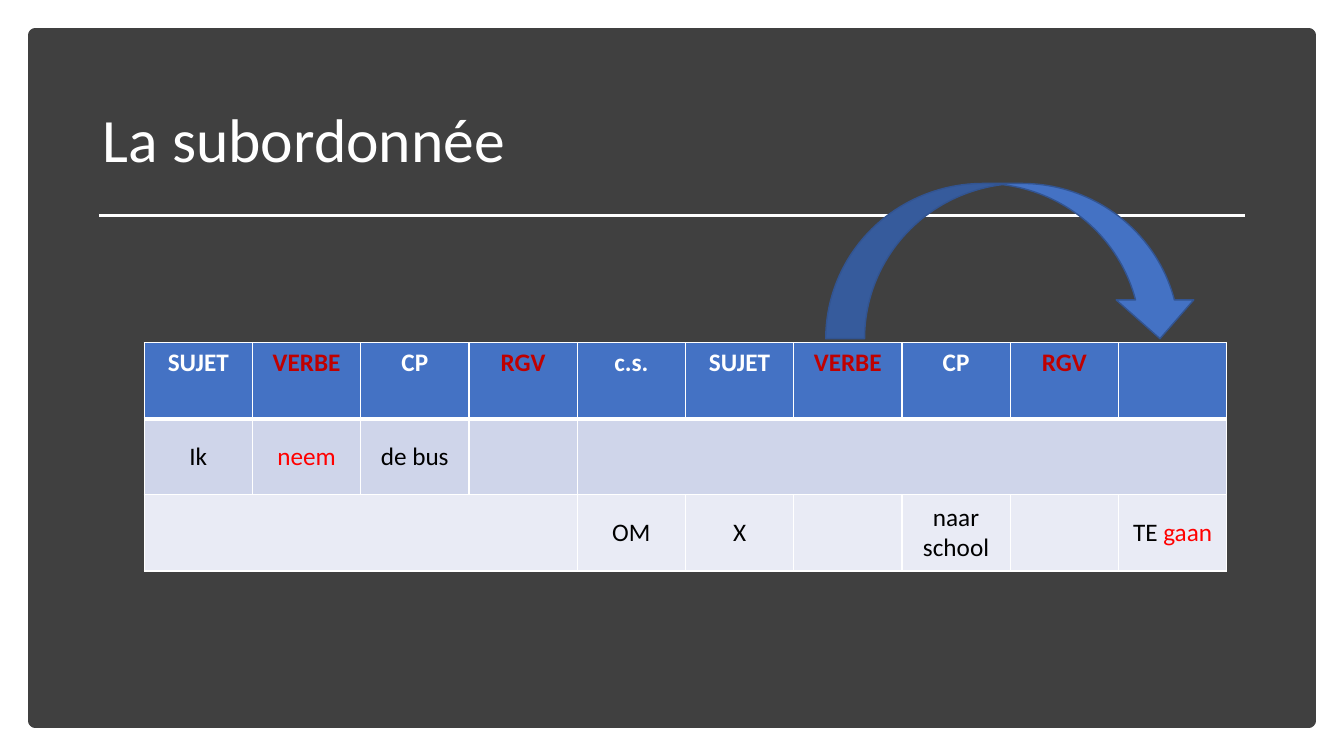
import lxml.etree
import pptx
import pptx.dml.color
import pptx.enum.shapes
import pptx.enum.text
import pptx.oxml.ns
import pptx.util

Inches = pptx.util.Inches
Pt = pptx.util.Pt
RGBColor = pptx.dml.color.RGBColor
SHAPES = pptx.enum.shapes.MSO_SHAPE
ALIGN = pptx.enum.text.PP_ALIGN
ANCHOR = pptx.enum.text.MSO_ANCHOR
qn = pptx.oxml.ns.qn

WHITE = RGBColor(0xFF, 0xFF, 0xFF)
BLACK = RGBColor(0, 0, 0)
CHARCOAL = RGBColor(0x40, 0x40, 0x40)
BLUE = RGBColor(0x44, 0x72, 0xC4)
DARK_BLUE = RGBColor(0x32, 0x54, 0x91)
PALE_BLUE = RGBColor(0xCF, 0xD5, 0xEA)
PALEST_BLUE = RGBColor(0xE9, 0xEB, 0xF5)
DARK_RED = RGBColor(0xC0, 0, 0)
RED = RGBColor(0xFF, 0, 0)

ROWS = [
    ["SUJET", "VERBE", "CP", "RGV", "c.s.", "SUJET", "VERBE", "CP", "RGV", ""],
    ["Ik", "neem", "de bus", "", "", "", "", "", "", ""],
    ["", "", "", "", "OM", "X", "", "naar school", "", "TE gaan"],
]
ROW_FILLS = [BLUE, PALE_BLUE, PALEST_BLUE]
MERGES = [((1, 4), (1, 9)), ((2, 0), (2, 3))]
WORD_COLORS = {"VERBE": DARK_RED, "RGV": DARK_RED, "neem": RED, "gaan": RED}


class SlideBuilder:
    font = "Calibri"

    def __init__(self, deck):
        self.page = deck.slides.add_slide(deck.slide_layouts[5])

    def style(self, span, size, color, bold=False):
        span.font.name = self.font
        span.font.size = Pt(size)
        span.font.color.rgb = color
        span.font.bold = bold

    def title(self, text, left, top, width, height):
        box = self.page.shapes.title
        box.left, box.top = Inches(left), Inches(top)
        box.width, box.height = Inches(width), Inches(height)
        box.text_frame.text = text
        box.text_frame.vertical_anchor = ANCHOR.MIDDLE
        para = box.text_frame.paragraphs[0]
        para.alignment = ALIGN.LEFT
        para.line_spacing = 0.9
        self.style(para.runs[0], 44, WHITE)

    def shape(self, kind, left, top, width, height, fill, line, weight):
        shape = self.page.shapes.add_shape(
            kind, Inches(left), Inches(top), Inches(width), Inches(height))
        shape.shadow.inherit = False
        shape.fill.solid()
        shape.fill.fore_color.rgb = fill
        shape.line.color.rgb = line
        shape.line.width = Pt(weight)
        return shape

    def backdrop(self, *bounds):
        panel = self.shape(SHAPES.RECTANGLE, *bounds, CHARCOAL, CHARCOAL, 10)
        self.page.shapes.title.element.addprevious(panel.element)

    def rule(self, left, right, top):
        rule = self.page.shapes.add_connector(
            pptx.enum.shapes.MSO_CONNECTOR.STRAIGHT,
            Inches(left), Inches(top), Inches(right), Inches(top))
        rule.line.color.rgb = WHITE
        rule.line.width = Pt(1.75)
        lxml.etree.SubElement(rule.element.spPr, qn("a:effectLst"))

    def borders(self, cell, weights):
        properties = cell._tc.get_or_add_tcPr()
        for index, (side, weight) in enumerate(weights.items()):
            line = lxml.etree.Element(qn("a:ln" + side), w=str(Pt(weight)))
            fill = lxml.etree.SubElement(line, qn("a:solidFill"))
            lxml.etree.SubElement(fill, qn("a:srgbClr"), val=str(WHITE))
            properties.insert(index, line)

    def cell(self, cell, text, fill, header, below_header):
        cell.fill.solid()
        cell.fill.fore_color.rgb = fill
        cell.vertical_anchor = ANCHOR.TOP if header else ANCHOR.MIDDLE
        self.borders(cell, {"L": 1, "R": 1, "T": 3 if below_header else 1,
                            "B": 3 if header else 1})
        para = cell.text_frame.paragraphs[0]
        para.alignment = ALIGN.CENTER
        para.font.size = Pt(18)
        pieces = ["TE ", "gaan"] if text == "TE gaan" else [text]
        for piece in filter(None, pieces):
            span = para.add_run()
            span.text = piece
            color = WORD_COLORS.get(piece, WHITE if header else BLACK)
            self.style(span, 18, color, header)

    def table(self, left, top, column_width, row_height):
        columns = len(ROWS[0])
        table = self.page.shapes.add_table(
            len(ROWS), columns, Inches(left), Inches(top),
            Inches(column_width * columns), Inches(row_height * len(ROWS))).table
        for column in table.columns:
            column.width = Inches(column_width)
        for index, (texts, fill) in enumerate(zip(ROWS, ROW_FILLS)):
            table.rows[index].height = Inches(row_height)
            for number, text in enumerate(texts):
                self.cell(table.cell(index, number), text, fill,
                          index == 0, index == 1)
        for first, last in MERGES:
            table.cell(*first).merge(table.cell(*last))


def main():
    deck = pptx.Presentation()
    deck.slide_width, deck.slide_height = Inches(13.33), Inches(7.5)
    slide = SlideBuilder(deck)
    slide.backdrop(0.35, 0.35, 12.63, 6.8)
    slide.title("La subordonnée", 0.92, 0.69, 11.5, 1.45)
    slide.rule(0.98, 12.35, 2.14)
    slide.table(1.43, 3.4, 1.074, 0.755)
    slide.shape(SHAPES.CURVED_DOWN_ARROW, 8.19, 1.82, 3.7, 1.54,
                BLUE, DARK_BLUE, 1)
    deck.save("out.pptx")


if __name__ == "__main__":
    main()
